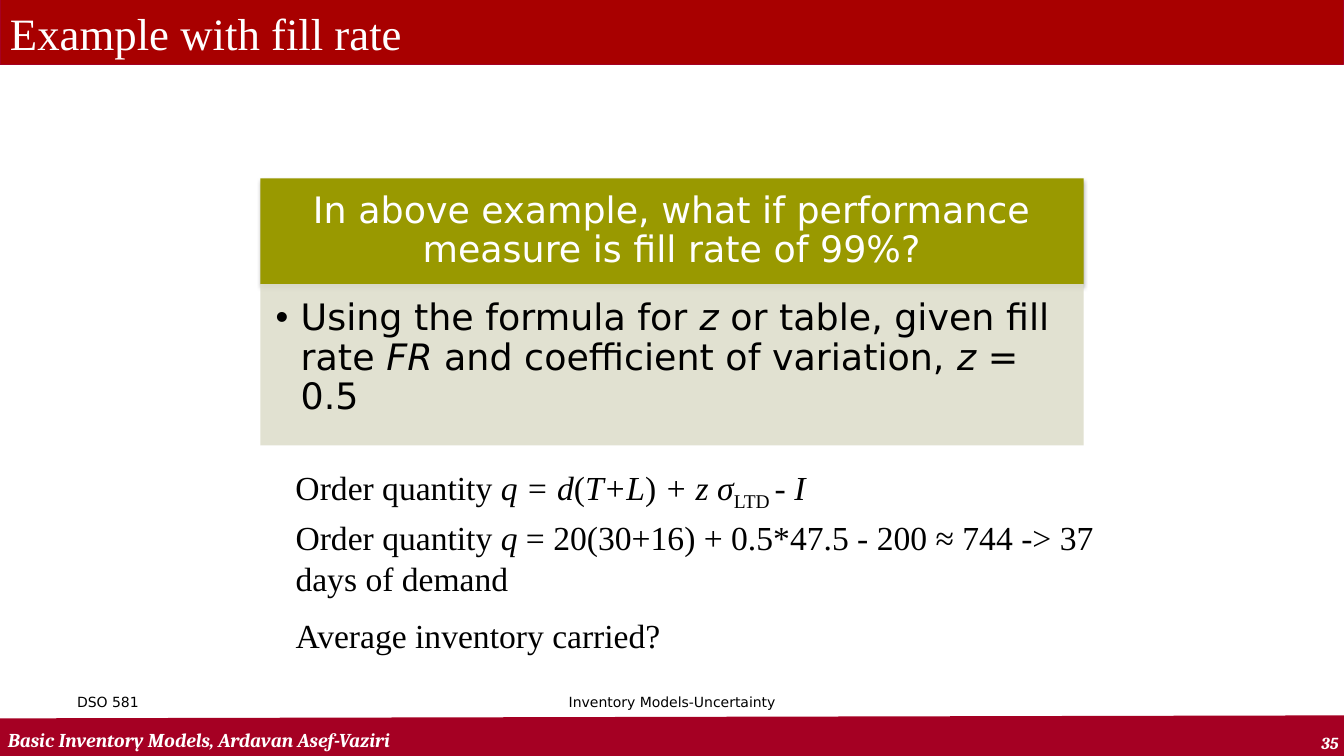
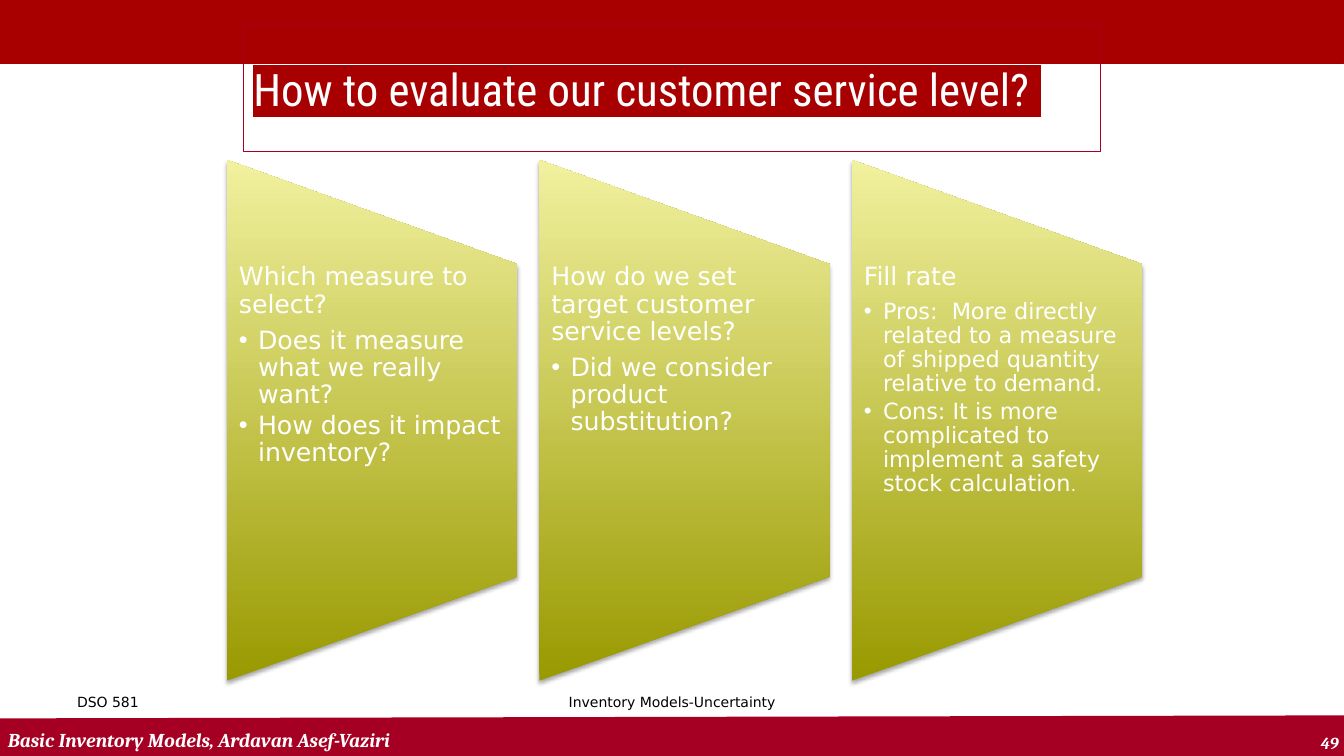
from dataclasses import dataclass
from typing import Any, NamedTuple, Optional

from lxml import etree
from pptx import Presentation
from pptx import util as u
from pptx.dml.color import RGBColor
from pptx.enum import shapes, text
from pptx.oxml.ns import qn

COLS, ROWS = 160, 90


@dataclass(frozen=True)
class Theme:
    band: str = "A80000"
    rule: str = "A50023"
    olive: str = "999900"
    pale_olive: str = "F1F19F"
    sand: str = "DEDECC"
    ink: str = "000000"
    paper: str = "FFFFFF"
    sans: str = "DejaVu Sans"
    serif: str = "Times New Roman"
    condensed: str = "Roboto Condensed"
    footer: str = "Cambria"
    title_pt: int = 32
    card_pt: int = 26
    formula_pt: int = 24
    panel_pt: int = 18
    detail_pt: int = 16
    footer_pt: int = 14
    number_pt: int = 12
    note_pt: int = 10


T = Theme()


class Box(NamedTuple):
    """Left, top, width and height in grid columns and rows."""
    x: float
    y: float
    w: float
    h: float


class Style(NamedTuple):
    font: str
    size: int
    color: str
    bold: bool = False
    italic: bool = False
    highlight: Optional[str] = None


class Run(NamedTuple):
    text: str
    italic: bool = False
    size: Optional[int] = None
    baseline: int = 0


class Para(NamedTuple):
    runs: tuple[Run, ...]
    align: Any = text.PP_ALIGN.LEFT
    line: Optional[int] = None
    before: Optional[int] = None
    after: Optional[int] = None
    indent: float = 0


@dataclass(frozen=True)
class Panel:
    heading: str
    bullets: tuple[tuple[Run, ...], ...]


NOTE = Style(T.sans, T.note_pt, T.ink)
FORMULA = Style(T.serif, T.formula_pt, T.ink)
PANEL = Style(T.sans, T.panel_pt, T.paper)
CENTER, RIGHT = text.PP_ALIGN.CENTER, text.PP_ALIGN.RIGHT
MIDDLE, BOTTOM = text.MSO_ANCHOR.MIDDLE, text.MSO_ANCHOR.BOTTOM
GROW = text.MSO_AUTO_SIZE.SHAPE_TO_FIT_TEXT

TITLE_BOX = Box(0, 0, COLS, 7.68)
LOW_TITLE_BOX = Box(29, 3, 102, 15)
CARD_HEAD = Box(31, 21.24, 98, 12.6)
CARD_BODY = Box(31, 33.84, 98, 19.2)
FIRST_PANEL = Box(27, 19.04, 34.56, 62)
PANEL_STEP = 37.2

PANELS = (
    Panel("Which measure to select?",
          ((Run("Does it measure what we really want?"),),
           (Run("How does it impact inventory?"),))),
    Panel("How do we set target customer service levels?",
          ((Run("Did we consider product substitution?"),),)),
    Panel("Fill rate",
          ((Run("Pros:  More directly related to a measure of shipped quantity "
                "relative to demand.", size=T.detail_pt),),
           (Run("Cons: It is more complicated to implement a safety stock calculation",
                size=T.detail_pt), Run(".", size=T.number_pt)))),
)


def grid(n: float) -> int:
    """One column and one row are both a twelfth of an inch."""
    return u.Inches(n / 12)


def emu(box: Box) -> tuple[int, ...]:
    return tuple(grid(n) for n in box)


def rgb(color: str) -> RGBColor:
    return RGBColor.from_string(color)


def child(parent: Any, tag: str, **attrs: Any) -> Any:
    return etree.SubElement(parent, qn(tag), {k: str(v) for k, v in attrs.items()})


def add_run(p: Any, run: Run, style: Style) -> None:
    r = p.add_run()
    r.text = run.text
    formats = {"name": style.font, "size": u.Pt(run.size or style.size),
               "bold": style.bold, "italic": style.italic or run.italic}
    for key, value in formats.items():
        setattr(r.font, key, value)
    r.font.color.rgb = rgb(style.color)
    rpr = r.font._element
    if run.baseline:
        rpr.set("baseline", str(run.baseline * 1000))
    if style.highlight:
        mark = etree.Element(qn("a:highlight"))
        child(mark, "a:srgbClr", val=style.highlight)
        rpr.find(qn("a:solidFill")).addnext(mark)


def format_para(p: Any, para: Para) -> None:
    p.alignment = para.align
    ppr = p._p.get_or_add_pPr()
    spacing = {"a:lnSpc": para.line, "a:spcBef": para.before, "a:spcAft": para.after}
    for tag, percent in spacing.items():
        if percent is not None:
            child(child(ppr, tag), "a:spcPct", val=percent * 1000)
    if para.indent:
        p.level = 1
        ppr.set("marL", str(u.Inches(para.indent)))
        ppr.set("indent", str(-u.Inches(para.indent)))
        child(ppr, "a:buFont", typeface="Arial")
        child(ppr, "a:buChar", char="•")


def add_text(slide: Any, box: Box, paras: tuple[Para, ...], style: Style,
             insets: tuple[float, ...] = (0.1, 0.05, 0.1, 0.05), **frame: Any) -> Any:
    sp = slide.shapes.add_textbox(*emu(box))
    tf = sp.text_frame
    sides = ("margin_left", "margin_top", "margin_right", "margin_bottom")
    formats = {"word_wrap": True, **dict(zip(sides, map(u.Inches, insets))), **frame}
    for key, value in formats.items():
        setattr(tf, key, value)
    for i, para in enumerate(paras):
        p = tf.paragraphs[0] if i == 0 else tf.add_paragraph()
        format_para(p, para)
        for run in para.runs:
            add_run(p, run, style)
    return sp


def plain(words: str, **formats: Any) -> tuple[Para, ...]:
    return (Para((Run(words),), **formats),)


def add_block(slide: Any, box: Box, fill: str, kind: Any = shapes.MSO_SHAPE.RECTANGLE) -> Any:
    sp = slide.shapes.add_shape(kind, *emu(box))
    sp.shadow.inherit = False
    sp.fill.solid()
    sp.fill.fore_color.rgb = rgb(fill)
    sp.line.fill.background()
    return sp


def add_shadow(sp: Any) -> None:
    effects = sp._element.spPr.find(qn("a:effectLst"))
    shadow = child(effects, "a:outerShdw", blurRad=u.Pt(3.1), dist=u.Pt(1.8),
                   dir=90 * 60000, rotWithShape=0)
    child(child(shadow, "a:srgbClr", val=T.ink), "a:alpha", val=35000)


def set_line(sp: Any, color: str, width: float) -> None:
    sp.line.color.rgb = rgb(color)
    sp.line.width = u.Pt(width)


def add_base(prs: Any, number: int) -> Any:
    """Add a slide with the shared bands and footers."""
    slide = prs.slides.add_slide(prs.slide_layouts[6])
    rule = slide.shapes.add_connector(shapes.MSO_CONNECTOR.STRAIGHT, grid(-0.12),
                                      grid(87.96), grid(160.32), grid(87.6))
    set_line(rule, T.rule, 29.25)
    child(rule._element.spPr, "a:effectLst")
    footer = Style(T.footer, T.footer_pt, T.paper, bold=True, italic=True)
    add_text(slide, Box(148.56, 86.64, 12, 3.6), plain(str(number), align=RIGHT),
             footer._replace(size=T.number_pt), auto_size=GROW)
    add_text(slide, Box(-0.24, 85.92, 125.4, 4.08),
             plain("Basic Inventory Models, Ardavan Asef-Vaziri"), footer,
             vertical_anchor=BOTTOM, auto_size=GROW)
    set_line(add_block(slide, TITLE_BOX._replace(y=-0.12), T.band), T.band, 0.75)
    add_text(slide, Box(8, 82, 37.33, 6), plain("DSO 581"), NOTE)
    add_text(slide, Box(54.67, 82, 50.67, 6),
             plain("Inventory Models-Uncertainty", align=CENTER), NOTE)
    return slide


def add_title(slide: Any, box: Box, words: str, font: str, anchor: Any) -> None:
    style = Style(font, T.title_pt, T.paper, highlight=T.band)
    sp = add_text(slide, box, plain(words), style, vertical_anchor=anchor)
    set_line(sp, T.rule, 0.75)


def add_card(slide: Any) -> None:
    add_shadow(add_block(slide, CARD_HEAD, T.olive))
    head = plain("In above example, what if performance measure is fill rate of 99%?",
                 align=CENTER, line=90, after=35)
    add_text(slide, CARD_HEAD, head, Style(T.sans, T.card_pt, T.paper),
             (0.2, 0.12, 0.2, 0.12), vertical_anchor=MIDDLE)
    body = add_block(slide, CARD_BODY, T.sand)
    color = body._element.spPr.find(qn("a:solidFill")).find(qn("a:srgbClr"))
    child(color, "a:alpha", val=90000)
    runs = (Run("Using the formula for "), Run("z ", True),
            Run("or table, given fill rate "), Run("FR", True),
            Run(" and coefficient of variation, "), Run("z", True), Run(" = 0.5"))
    add_text(slide, CARD_BODY, (Para(runs, line=90, after=15, indent=0.25),),
             Style(T.sans, T.card_pt, T.ink), (0.15, 0.15, 0.2, 0.23))


def add_formulas(slide: Any) -> None:
    rule = (Run("Order quantity "), Run("q = d", True), Run("("), Run("T+L", True),
            Run(")"), Run(" + z σ", True), Run("LTD ", baseline=-25), Run("- I", True))
    result = (Run("Order quantity "), Run("q", True),
              Run(" = 20(30+16) + 0.5*47.5 - 200 ≈ 744 -> 37 days of demand"))
    add_text(slide, Box(34, 55, 77, 6), (Para(rule, before=50),), FORMULA, auto_size=GROW)
    add_text(slide, Box(34, 61, 100, 18.12),
             (Para(result, before=50), *plain("Average inventory carried?", before=50)),
             FORMULA, auto_size=GROW)


def add_panel(slide: Any, box: Box, panel: Panel) -> None:
    """Draw a manual operation shape turned on its side, with text over it."""
    turned = Box(box.x + (box.w - box.h) / 2, box.y + (box.h - box.w) / 2, box.h, box.w)
    sp = add_block(slide, turned, T.olive, shapes.MSO_SHAPE.FLOWCHART_MANUAL_OPERATION)
    sp.rotation = 270
    sp.fill.gradient()
    sp.fill.gradient_angle = 90
    for stop, color in zip(sp.fill.gradient_stops, (T.olive, T.pale_olive)):
        stop.color.rgb = rgb(color)
    sp._element.spPr.find(qn("a:gradFill")).set("rotWithShape", "0")
    add_shadow(sp)
    bullets = (Para(runs, line=90, after=15, indent=0.19) for runs in panel.bullets)
    add_text(slide, Box(box.x, box.y + box.h * 0.2, box.w, box.h * 0.6),
             (*plain(panel.heading, line=90, after=35), *bullets), PANEL,
             (0.12, 0, 0.12, 0))


def main() -> None:
    prs = Presentation()
    prs.slide_width, prs.slide_height = grid(COLS), grid(ROWS)

    slide = add_base(prs, 35)
    add_title(slide, TITLE_BOX, "Example with fill rate", T.serif, BOTTOM)
    add_formulas(slide)
    add_card(slide)

    slide = add_base(prs, 49)
    add_title(slide, LOW_TITLE_BOX, "How to evaluate our customer service level? ",
              T.condensed, MIDDLE)
    for i, panel in enumerate(PANELS):
        add_panel(slide, FIRST_PANEL._replace(x=FIRST_PANEL.x + i * PANEL_STEP), panel)

    prs.save("out.pptx")


if __name__ == "__main__":
    main()
